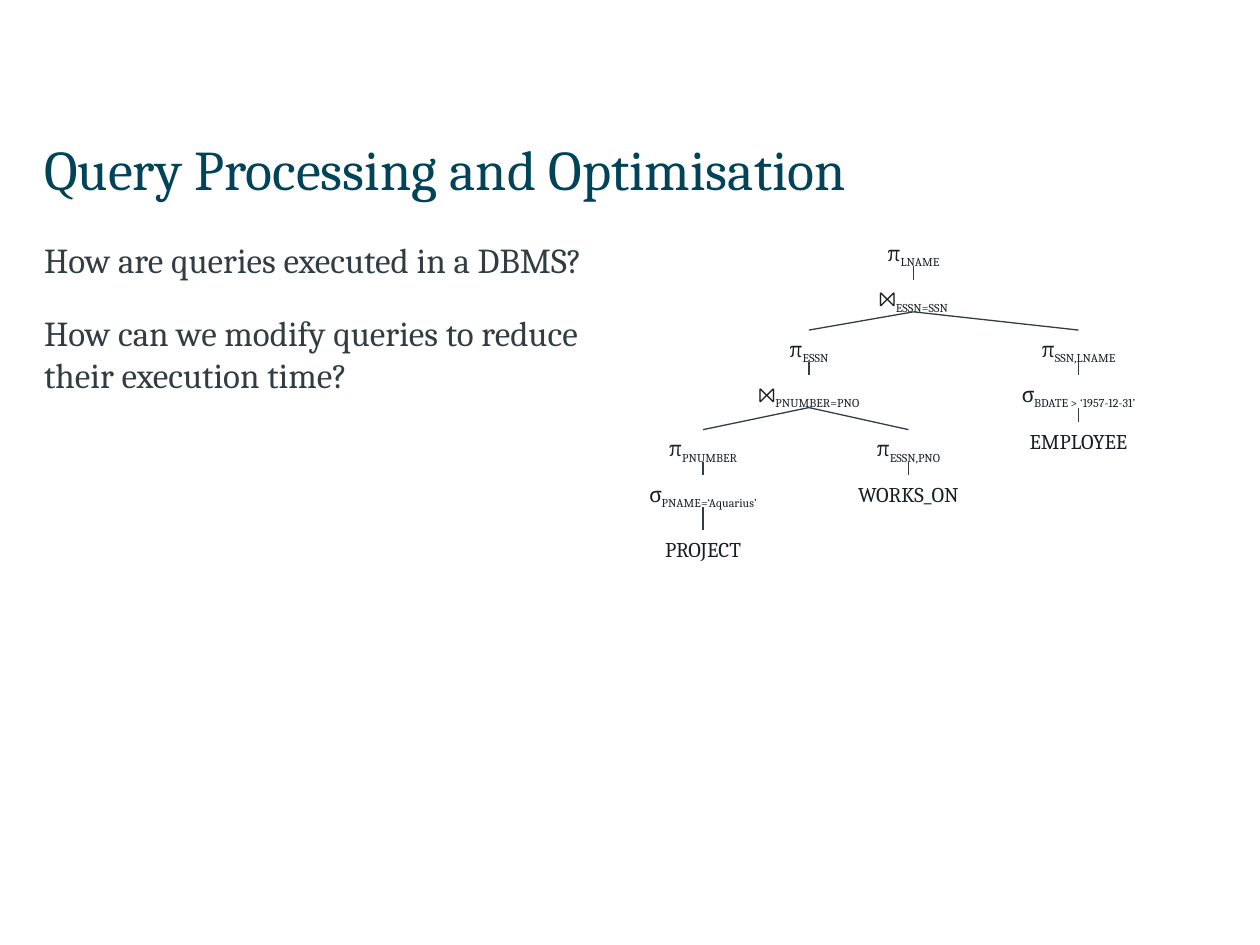
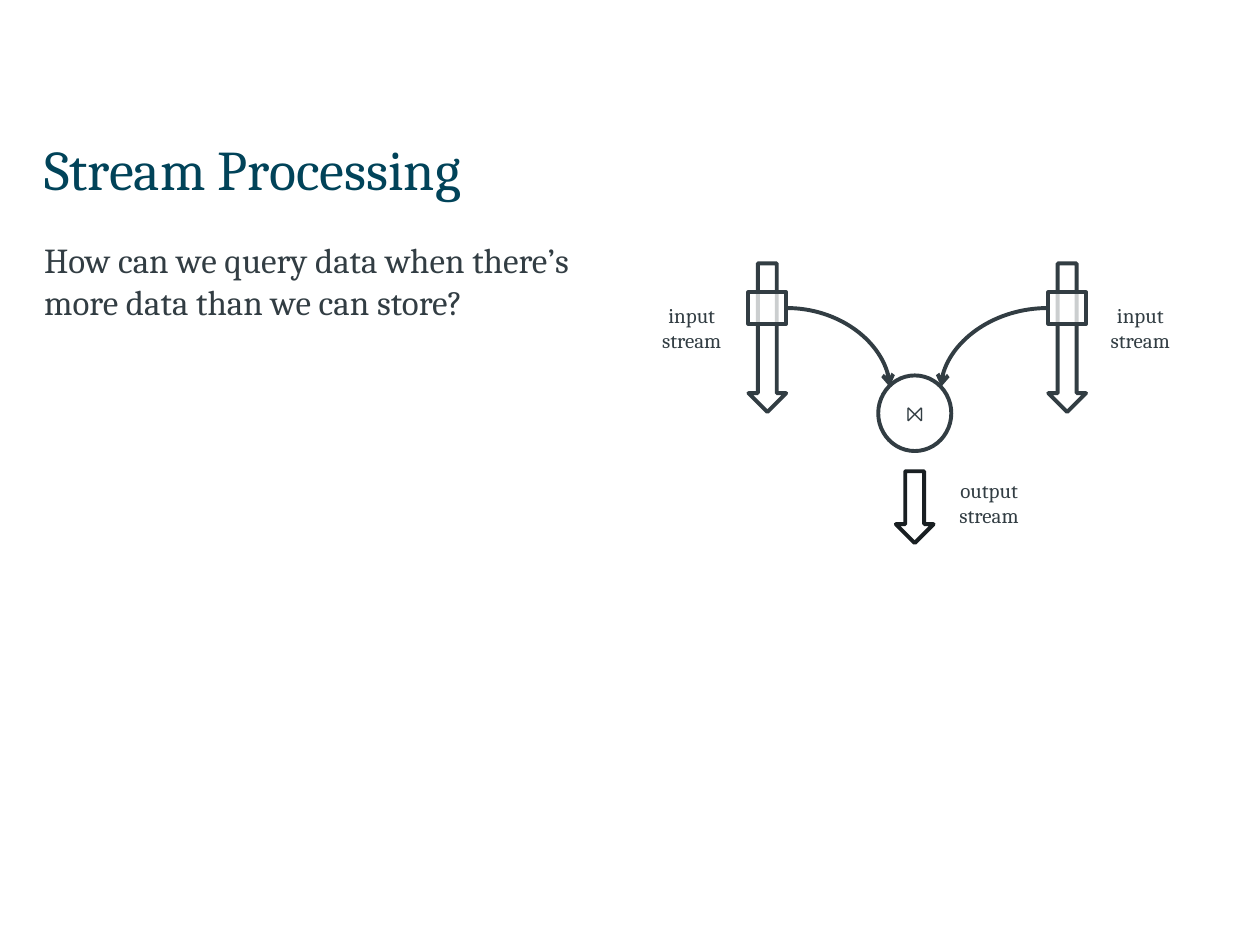
from dataclasses import dataclass
from typing import Optional

from lxml import etree
from pptx import Presentation
from pptx import util as u
from pptx.dml.color import RGBColor
from pptx.enum import shapes, text
from pptx.oxml.ns import qn

COLORS = {"title": "014359", "body": "323D43", "ink": "191F22", "paper": "FFFFFF"}
FONT = "Cambria"
COLUMNS, ROWS = 100, 75
WIDTH, HEIGHT = u.Inches(10), u.Inches(7.5)
LEFT_MARGIN = 3.5
NODE_WIDTH, NODE_HEIGHT = 11.9, 2.55
LABEL_WIDTH, LABEL_HEIGHT = 7.2, 5
ARROW_WIDTH = 3
WINDOW_TOP, WINDOW_HEIGHT = 23.2, 2.5
TOP, LEFT, BOTTOM, RIGHT = range(4)
JOIN_TOP_LEFT, JOIN_TOP_RIGHT = 1, 7


@dataclass(frozen=True)
class Node:
    """One operator or relation of the query tree; text after | is subscript."""
    name: str
    label: str
    center: float
    top: float
    parent: Optional[str] = None


@dataclass(frozen=True)
class Stream:
    center: float
    label_left: float
    window_side: int
    join_site: int
    join_x: float


QUERY_TREE = (
    Node("result", "π|LNAME", 72.5, 18.6),
    Node("join employee", "⨝|ESSN=SSN", 72.5, 22.2, "result"),
    Node("essn", "π|ESSN", 64.2, 26.2, "join employee"),
    Node("ssn", "π|SSN,LNAME", 85.6, 26.2, "join employee"),
    Node("join project", "⨝|PNUMBER=PNO", 64.2, 29.8, "essn"),
    Node("born after", "σ|BDATE > ‘1957-12-31’", 85.6, 29.8, "ssn"),
    Node("employee", "EMPLOYEE", 85.6, 33.5, "born after"),
    Node("pnumber", "π|PNUMBER", 55.8, 34.1, "join project"),
    Node("essn pno", "π|ESSN,PNO", 72.1, 34.1, "join project"),
    Node("named", "σ|PNAME=‘Aquarius’", 55.8, 37.7, "pnumber"),
    Node("works on", "WORKS_ON", 72.1, 37.7, "essn pno"),
    Node("project", "PROJECT", 55.8, 42.1, "named"),
)

INPUT_STREAMS = (
    Stream(60.9, 51.3, RIGHT, JOIN_TOP_LEFT, 70.6),
    Stream(84.7, 86.9, LEFT, JOIN_TOP_RIGHT, 74.7),
)


def across(columns: float) -> int:
    return round(WIDTH * columns / COLUMNS)


def down(rows: float) -> int:
    return round(HEIGHT * rows / ROWS)


def area(left: float, top: float, width: float, height: float) -> tuple:
    return across(left), down(top), across(width), down(height)


def write(frame, content: str, *, size: float = 12, color: str = "body",
          align=text.PP_ALIGN.CENTER, after: float = 0, wrap: bool = False,
          anchor=text.MSO_ANCHOR.TOP) -> None:
    """Write one paragraph a line, with the part after | as subscript."""
    frame.auto_size = text.MSO_AUTO_SIZE.NONE
    frame.word_wrap = wrap
    frame.vertical_anchor = anchor
    for index, line in enumerate(content.split("\n")):
        para = frame.add_paragraph() if index else frame.paragraphs[0]
        para.alignment = align
        para.space_after = u.Pt(after)
        for part, piece in enumerate(line.split("|")):
            span = para.add_run()
            span.text = piece
            span.font.name = FONT
            span.font.size = u.Pt(size)
            span.font.color.rgb = RGBColor.from_string(COLORS[color])
            if part:
                span.font._element.set("baseline", "-25000")


def add_text(page, content: str, place: tuple, **style):
    box = page.shapes.add_textbox(*place)
    write(box.text_frame, content, **style)
    return box


def style_line(line, weight: float, color: str = "body") -> None:
    line.color.rgb = RGBColor.from_string(COLORS[color])
    line.width = u.Pt(weight)


def add_outlined(page, kind, place: tuple, color: str = "body"):
    shape = page.shapes.add_shape(kind, *place)
    shape.shadow.inherit = False
    shape.fill.solid()
    shape.fill.fore_color.rgb = RGBColor.from_string(COLORS["paper"])
    style_line(shape.line, 2.25, color)
    return shape


def add_link(page, kind, start: tuple, end: tuple, weight: float):
    link = page.shapes.add_connector(kind, *start, *end)
    style_line(link.line, weight)
    etree.SubElement(link._element.spPr, qn("a:effectLst"))
    return link


def add_page(deck, title: str, questions: str):
    page = deck.slides.add_slide(deck.slide_layouts[5])
    heading = page.shapes.title
    heading.left, heading.top, heading.width, heading.height = area(LEFT_MARGIN, 9.8, 92.9, 7.1)
    write(heading.text_frame, title, size=32, color="title", wrap=True,
          align=text.PP_ALIGN.LEFT, anchor=text.MSO_ANCHOR.MIDDLE)
    body = add_text(page, questions, area(LEFT_MARGIN, 18.4, 44.8, 49.1), size=20,
                    after=18, wrap=True, align=text.PP_ALIGN.LEFT)
    for box in (heading, body):
        box.text_frame.margin_left = 0
    return page


def draw_query_tree(page) -> None:
    boxes = {}
    for node in QUERY_TREE:
        place = area(node.center - NODE_WIDTH / 2, node.top, NODE_WIDTH, NODE_HEIGHT)
        boxes[node.name] = add_text(page, node.label, place, color="ink")
        if node.parent:
            link = add_link(page, shapes.MSO_CONNECTOR.STRAIGHT, (0, 0), (0, 0), 0.75)
            link.begin_connect(boxes[node.parent], BOTTOM)
            link.end_connect(boxes[node.name], TOP)


def draw_flow_arrow(page, center: float, top: float, height: float, color: str = "body") -> None:
    place = area(center - ARROW_WIDTH / 2, top, ARROW_WIDTH, height)
    add_outlined(page, shapes.MSO_SHAPE.DOWN_ARROW, place, color)


def draw_label(page, content: str, left: float, top: float) -> None:
    add_text(page, content, area(left, top, LABEL_WIDTH, LABEL_HEIGHT))


def draw_window(page, center: float):
    """Draw the see-through window that lies over a stream."""
    place = area(center - ARROW_WIDTH / 2, WINDOW_TOP, ARROW_WIDTH, WINDOW_HEIGHT)
    window = add_outlined(page, shapes.MSO_SHAPE.RECTANGLE, place)
    paint = window._element.spPr.find(qn("a:solidFill"))[0]
    etree.SubElement(paint, qn("a:alpha"), val="75000")
    return window


def link_window(page, window, join, stream: Stream) -> None:
    """Curve from the window's side to a diagonal site of the join circle."""
    end = across(stream.join_x), down(30.7)
    link = add_link(page, shapes.MSO_CONNECTOR.CURVE, (0, 0), end, 2.25)
    link.begin_connect(window, stream.window_side)
    properties = link._element.spPr
    properties.find(qn("a:prstGeom")).set("prst", "curvedConnector2")
    etree.SubElement(properties.find(qn("a:ln")), qn("a:tailEnd"), type="arrow")
    ends = link._element.find(".//" + qn("p:cNvCxnSpPr"))
    etree.SubElement(ends, qn("a:endCxn"), id=str(join.shape_id), idx=str(stream.join_site))


def draw_stream_join(page) -> None:
    join = add_outlined(page, shapes.MSO_SHAPE.OVAL, area(69.7, 29.8, 5.8, 6))
    frame = join.text_frame
    frame.margin_left = frame.margin_top = frame.margin_right = frame.margin_bottom = 0
    write(frame, "⨝", anchor=text.MSO_ANCHOR.MIDDLE)
    for stream in INPUT_STREAMS:
        draw_flow_arrow(page, stream.center, 20.9, 11.8)
        window = draw_window(page, stream.center)
        link_window(page, window, join, stream)
        draw_label(page, "input\nstream", stream.label_left, 23.5)
    draw_flow_arrow(page, 72.6, 37.4, 5.7, "ink")
    draw_label(page, "output\nstream", 74.9, 37.4)


def main() -> None:
    deck = Presentation()
    deck.slide_width, deck.slide_height = WIDTH, HEIGHT
    draw_query_tree(add_page(
        deck, "Query Processing and Optimisation",
        "How are queries executed in a DBMS?\n"
        "How can we modify queries to reduce their execution time?"))
    draw_stream_join(add_page(
        deck, "Stream Processing",
        "How can we query data when there’s more data than we can store?"))
    deck.save("out.pptx")


if __name__ == "__main__":
    main()
